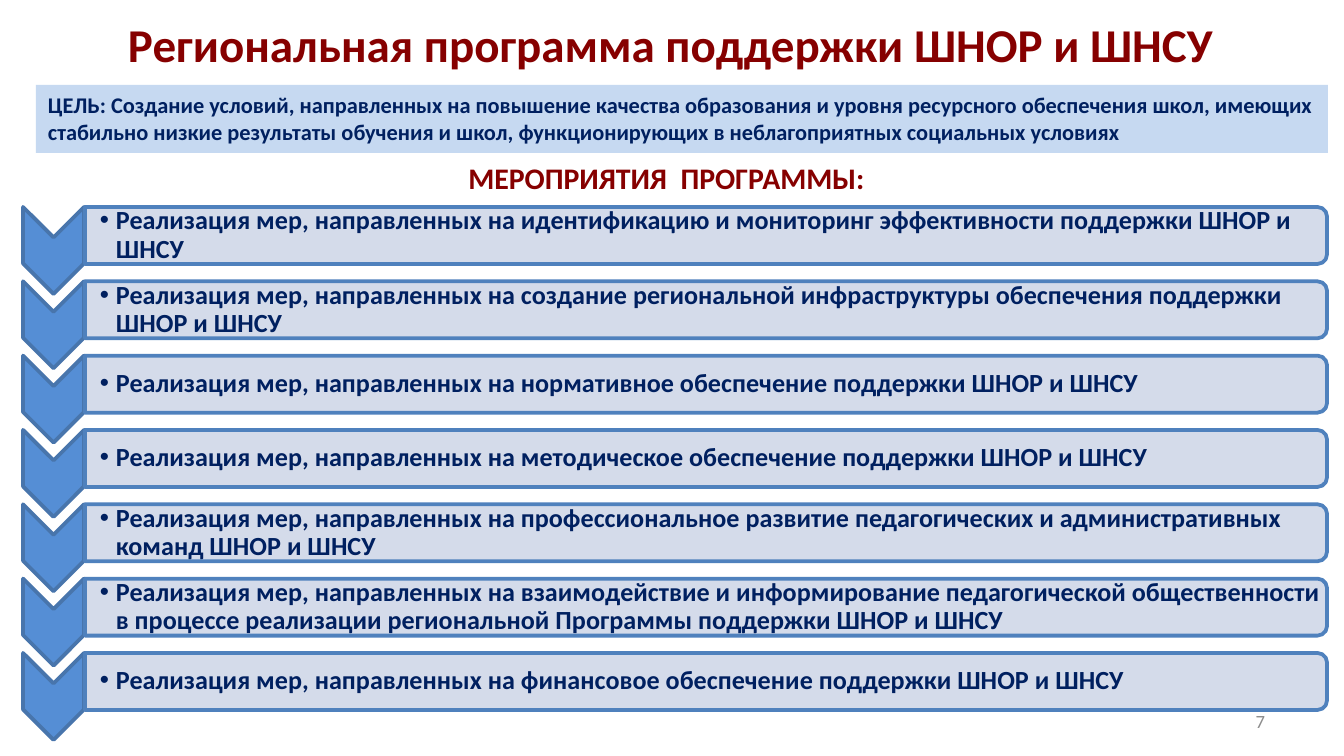
from lxml import etree
from pptx import Presentation
from pptx.dml.color import RGBColor
from pptx.enum.shapes import MSO_SHAPE
from pptx.enum.text import MSO_ANCHOR, MSO_AUTO_SIZE, PP_ALIGN
from pptx.oxml.ns import qn
from pptx.util import Emu, Pt

CHEVRON, BAR = MSO_SHAPE.CHEVRON, MSO_SHAPE.ROUND_2_SAME_RECTANGLE
TOP, MIDDLE = MSO_ANCHOR.TOP, MSO_ANCHOR.MIDDLE
LEFT, CENTER, RIGHT = PP_ALIGN.LEFT, PP_ALIGN.CENTER, PP_ALIGN.RIGHT
FONT = "Calibri"
COLORS = {
    "heading": "860000", "text": "002060", "number": "8C8C8C", "goal": "C6D9F1",
    "chevron": "558ED5", "chevron_line": "4875AC", "bar": "D0D8E8", "bar_line": "4F81BD",
}

TITLE = "Региональная программа поддержки ШНОР и ШНСУ "
GOAL = ("ЦЕЛЬ: Создание условий, направленных на повышение качества образования и уровня "
        "ресурсного обеспечения школ, имеющих стабильно низкие результаты обучения и школ, "
        "функционирующих в неблагоприятных социальных условиях")
SUBTITLE = "МЕРОПРИЯТИЯ  ПРОГРАММЫ:"
NUMBER = "7"
LEAD = "Реализация мер, направленных на "
MEASURES = [
    "идентификацию и мониторинг эффективности поддержки ШНОР и ШНСУ",
    "создание региональной инфраструктуры обеспечения поддержки ШНОР и ШНСУ",
    "нормативное обеспечение поддержки ШНОР и ШНСУ",
    "методическое обеспечение поддержки ШНОР и ШНСУ",
    "профессиональное развитие педагогических и административных команд ШНОР и ШНСУ",
    "взаимодействие и информирование педагогической общественности в процессе реализации "
    "региональной Программы поддержки ШНОР и ШНСУ",
    "финансовое обеспечение поддержки ШНОР и ШНСУ",
]
FIRST_TOP, LAST_TOP = 207, 653
INSETS = (12, 6, 12, 6)


def px(n):
    return Emu(round(n * 914400 / 134.4))


def rgb(name):
    return RGBColor.from_string(COLORS[name])


def place(sp, x, y, w, h):
    sp.left, sp.top, sp.width, sp.height = px(x), px(y), px(w), px(h)


def write(sp, text, size, color, align=LEFT, anchor=TOP, bold=True, insets=INSETS):
    tf = sp.text_frame
    tf.text = text
    tf.word_wrap = True
    tf.auto_size = MSO_AUTO_SIZE.NONE
    tf.vertical_anchor = anchor
    tf.margin_left, tf.margin_top, tf.margin_right, tf.margin_bottom = map(px, insets)
    p = tf.paragraphs[0]
    p.alignment = align
    font = p.runs[0].font
    font.name, font.size, font.bold = FONT, Pt(size), bold
    font.color.rgb = rgb(color)
    return p


def add_text(s, box, *args, **kwargs):
    sp = s.shapes.add_textbox(*map(px, box))
    return sp, write(sp, *args, **kwargs)


def add_turned(s, kind, x, y, w, h, color):
    sp = s.shapes.add_shape(kind, px(x + (w - h) / 2), px(y + (h - w) / 2), px(h), px(w))
    sp.rotation = 90
    sp.shadow.inherit = False
    sp.fill.solid()
    sp.fill.fore_color.rgb = rgb(color)
    sp.line.color.rgb = rgb(color + "_line")
    sp.line.width = Pt(2)
    return sp


def add_bullet(p):
    pPr = p._p.get_or_add_pPr()
    pPr.set("marL", str(px(16)))
    pPr.set("indent", str(-px(16)))
    etree.SubElement(pPr, qn("a:buFont"), typeface="Arial")
    etree.SubElement(pPr, qn("a:buChar"), char="•")


def add_measure(s, y, text):
    add_turned(s, CHEVRON, 23, y, 61, 87, "chevron")
    bar = add_turned(s, BAR, 85, y, 1242, 57, "bar")
    fill = bar._element.spPr.find(qn("a:solidFill"))
    etree.SubElement(fill[0], qn("a:alpha"), val="90000")
    sp, p = add_text(s, (85, y + 3, 1239, 51), text, 14, "text",
                     anchor=MIDDLE, insets=(15, 1, 1, 1))
    p.line_spacing = 0.9
    add_bullet(p)


def main():
    prs = Presentation()
    prs.slide_width, prs.slide_height = px(1344), px(756)
    s = prs.slides.add_slide(prs.slide_layouts[5])
    title = s.shapes.title
    place(title, 71, 13, 1210, 62)
    write(title, TITLE, 25.2, "heading", CENTER, MIDDLE)

    add_text(s, (964, 701, 313, 40), NUMBER, 10, "number", RIGHT, MIDDLE, bold=False)
    goal, p = add_text(s, (36, 85, 1292, 68), GOAL, 12, "text")
    goal.fill.solid()
    goal.fill.fore_color.rgb = rgb("goal")
    add_text(s, (249, 154, 835, 50), SUBTITLE, 16, "heading", CENTER)

    pitch = (LAST_TOP - FIRST_TOP) / (len(MEASURES) - 1)
    for i, measure in enumerate(MEASURES):
        add_measure(s, FIRST_TOP + i * pitch, LEAD + measure)
    prs.save("out.pptx")


if __name__ == "__main__":
    main()
